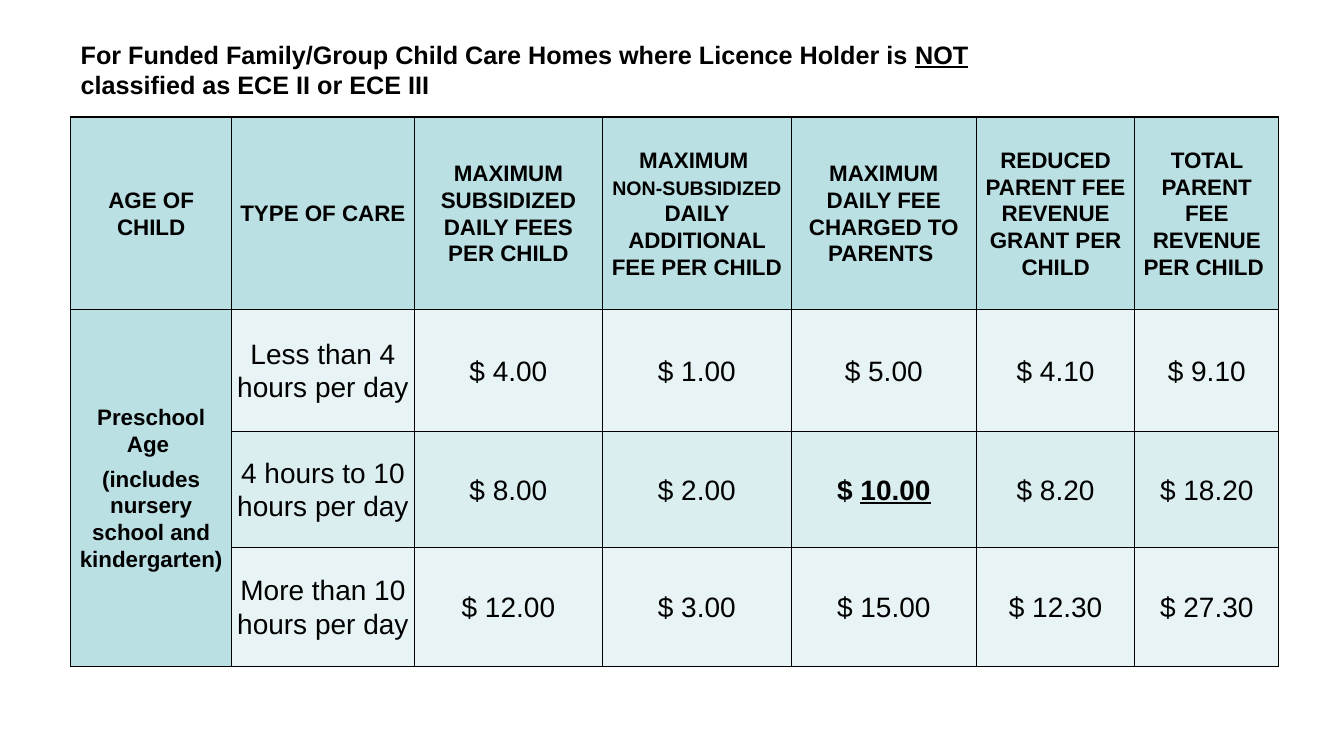
import pptx
import pptx.util
import pptx.dml.color
import pptx.enum.text
import pptx.oxml
import pptx.oxml.ns

Cm = pptx.util.Cm
Pt = pptx.util.Pt
RGBColor = pptx.dml.color.RGBColor
MID = pptx.enum.text.MSO_ANCHOR.MIDDLE
ALIGN = pptx.enum.text.PP_ALIGN

BLACK = RGBColor(0x00, 0x00, 0x00)
TEAL = RGBColor(0xBB, 0xE0, 0xE3)
PALE = RGBColor(0xE7, 0xF3, 0xF4)
SOFT = RGBColor(0xDA, 0xED, 0xEF)

HEAD = {"name": "Arial", "size": Pt(16), "bold": True}
BODY = {"name": "Arial", "size": Pt(20), "bold": False}
TITLE = {"name": "Arial", "size": Pt(18), "bold": True}
LINE = {"underline": True}
INSET = {"margin_left": Cm(0.13), "margin_right": Cm(0.13),
         "margin_top": 0, "margin_bottom": 0, "vertical_anchor": MID}


def write(para, parts, style):
    for text, extra in parts:
        if text == "\n":
            para.add_line_break()
            continue
        run = para.add_run()
        run.text = text
        run.font.color.rgb = BLACK
        for key, val in {**style, **extra}.items():
            setattr(run.font, key, val)


def frame(cell):
    props = cell._tc.get_or_add_tcPr()
    for spot, side in enumerate("LRTB"):
        edge = pptx.oxml.parse_xml(
            f'<a:ln{side} {pptx.oxml.ns.nsdecls("a")} w="12700"><a:solidFill>'
            f'<a:srgbClr val="{BLACK}"/></a:solidFill></a:ln{side}>')
        props.insert(spot, edge)


deck = pptx.Presentation()
deck.slide_width, deck.slide_height = Cm(33.87), Cm(19.05)
slide = deck.slides.add_slide(deck.slide_layouts[5])

title = slide.shapes.title
place = {"left": Cm(1.78), "top": Cm(0.84), "width": Cm(23.83), "height": Cm(1.8)}
for key, val in place.items():
    setattr(title, key, val)
box = title.text_frame
box.word_wrap = True
box.auto_size = pptx.enum.text.MSO_AUTO_SIZE.NONE
box.vertical_anchor = MID
para = box.paragraphs[0]
para.alignment = ALIGN.LEFT
write(para, [
    ("For Funded Family/Group Child Care Homes where Licence Holder is ", {}),
    ("NOT", LINE),
    (" classified as ECE II or ECE III", {}),
], TITLE)

heads = [
    "AGE OF CHILD",
    "TYPE OF CARE",
    "MAXIMUM SUBSIDIZED DAILY FEES PER CHILD",
    [("MAXIMUM ", {}), ("\n", {}), ("NON-SUBSIDIZED", {"size": Pt(14)}),
     (" DAILY ADDITIONAL FEE PER CHILD", {})],
    "MAXIMUM DAILY FEE CHARGED TO PARENTS ",
    "REDUCED PARENT FEE REVENUE GRANT PER CHILD",
    "TOTAL PARENT FEE REVENUE PER CHILD ",
]
ages = ["Preschool", "Age ", "(includes nursery school and kindergarten)"]
ten = [("$ ", {"bold": True}), ("10.00", {"bold": True, "underline": True})]
rows = [
    heads,
    [None, "Less than 4 hours per day", "$ 4.00", "$ 1.00", "$ 5.00", "$ 4.10", "$ 9.10"],
    [None, "4 hours to 10 hours per day", "$ 8.00", "$ 2.00", ten, "$ 8.20", "$ 18.20"],
    [None, "More than 10 hours per day", "$ 12.00", "$ 3.00", "$ 15.00", "$ 12.30", "$ 27.30"],
]
wides = [4.06, 4.6, 4.75, 4.75, 4.67, 3.99, 3.63]
highs = [4.85, 3.07, 2.92, 3.0]
fills = [TEAL, PALE, SOFT, PALE]

grid = slide.shapes.add_table(len(rows), len(wides), Cm(1.78), Cm(2.95),
                              Cm(sum(wides)), Cm(sum(highs))).table
for col, wide in zip(grid.columns, wides):
    col.width = Cm(wide)
for row, high in zip(grid.rows, highs):
    row.height = Cm(high)
grid.cell(1, 0).merge(grid.cell(3, 0))

for r, row in enumerate(rows):
    for c, item in enumerate(row):
        cell = grid.cell(r, c)
        for key, val in INSET.items():
            setattr(cell, key, val)
        cell.fill.solid()
        cell.fill.fore_color.rgb = TEAL if c == 0 else fills[r]
        frame(cell)
        if cell.is_spanned:
            continue
        style = HEAD if r == 0 or c == 0 else BODY
        for n, text in enumerate(ages if item is None else [item]):
            para = cell.text_frame.add_paragraph() if n else cell.text_frame.paragraphs[0]
            para.alignment = ALIGN.CENTER
            para.line_spacing = 1.07
            if n == 2:
                para.space_before = Pt(6)
            write(para, [(text, {})] if isinstance(text, str) else text, style)

deck.save("out.pptx")
